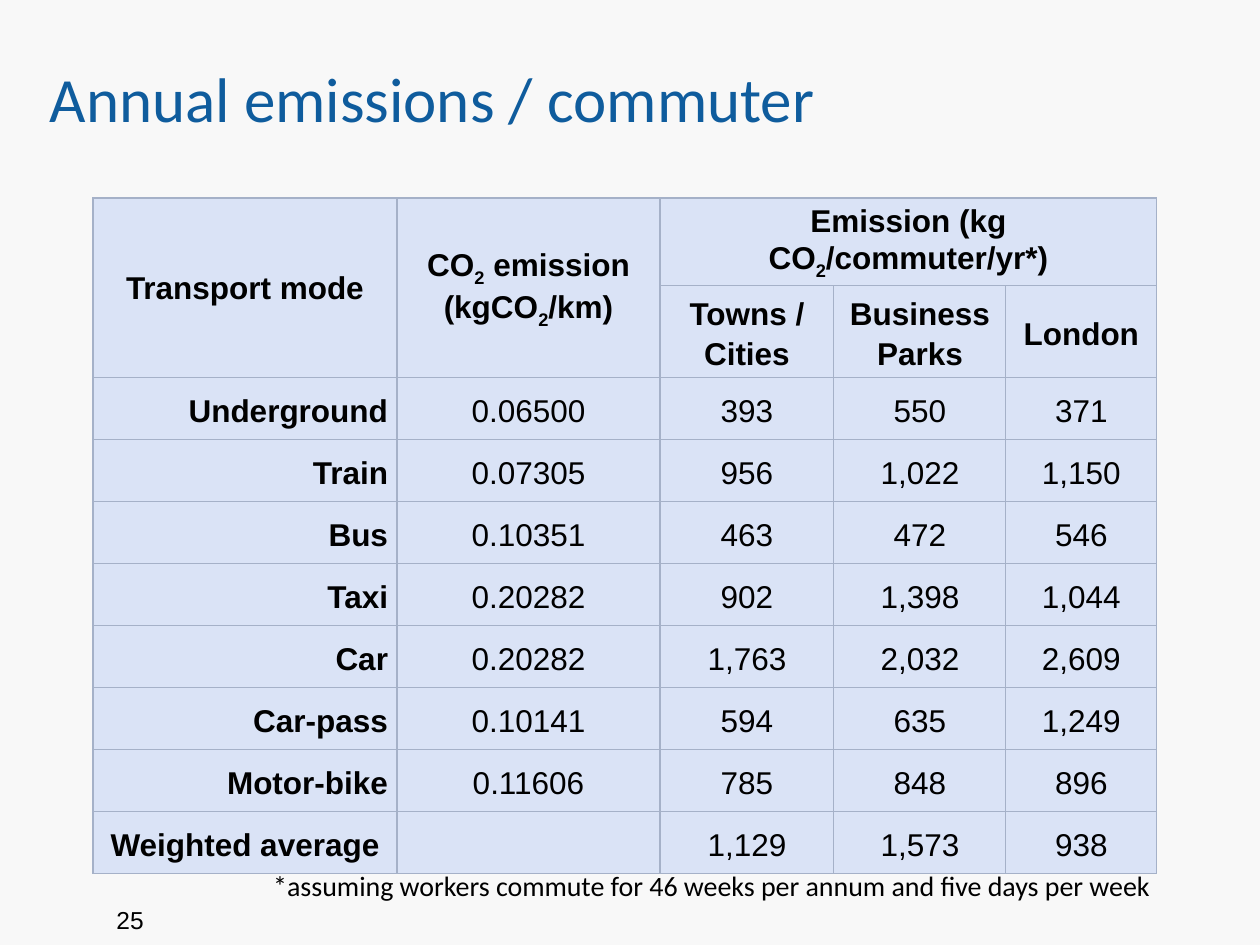
from lxml import etree
from pptx import Presentation
from pptx.dml.color import RGBColor
from pptx.enum import text
from pptx.oxml.ns import qn
from pptx.util import Pt

SCALE = 914400 / 126
COLORS = {"background": "F8F8F8", "title": "0F5C9D", "text": "000000",
          "cell": "DAE3F6", "border": "A5B1C8"}
CENTER, RIGHT = text.PP_ALIGN.CENTER, text.PP_ALIGN.RIGHT


def px(*lengths):
    return [round(length * SCALE) for length in lengths]


def write(para, words, name, size, color="text", bold=False, align=None):
    """Fill a paragraph; parts between underscores become subscripts."""
    para.alignment = align
    for index, part in enumerate(words.split("_")):
        span = para.add_run()
        span.text = part
        span.font.name, span.font.size, span.font.bold = name, Pt(size), bold
        span.font.color.rgb = RGBColor.from_string(COLORS[color])
        if index % 2:
            span._r.get_or_add_rPr().set("baseline", "-25000")


deck = Presentation()
deck.slide_width, deck.slide_height = px(1260, 945)
page = deck.slides.add_slide(deck.slide_layouts[5])
page.background.fill.solid()
page.background.fill.fore_color.rgb = RGBColor.from_string(COLORS["background"])

# Page number
number = page.shapes.add_textbox(*px(104, 899, 873, 66))
number.text_frame.word_wrap = True
write(number.text_frame.paragraphs[0], "25", "Arial", 14)

# Emissions table: two header rows, then one row per transport mode
rows = [
    ["Transport mode", "CO_2_ emission (kgCO_2_/km)",
     "Emission (kg CO_2_/commuter/yr*)", "", ""],
    ["", "", "Towns / Cities", "Business\nParks", "London"],
    ["Underground", "0.06500", "393", "550", "371"],
    ["Train", "0.07305", "956", "1,022", "1,150"],
    ["Bus", "0.10351", "463", "472", "546"],
    ["Taxi", "0.20282", "902", "1,398", "1,044"],
    ["Car", "0.20282", "1,763", "2,032", "2,609"],
    ["Car-pass", "0.10141", "594", "635", "1,249"],
    ["Motor-bike", "0.11606", "785", "848", "896"],
    ["Weighted average", "", "1,129", "1,573", "938"],
]
widths = px(304, 263, 174, 172, 151)
heights = px(88, 92, *[62] * 8)
left, top = px(93, 198)
table = page.shapes.add_table(len(rows), len(widths), left, top,
                              sum(widths), sum(heights)).table
table.first_row = table.horz_banding = False
for column, width in zip(table.columns, widths):
    column.width = width
for row, height in zip(table.rows, heights):
    row.height = height
for start, end in [((0, 0), (1, 0)), ((0, 1), (1, 1)), ((0, 2), (0, 4))]:
    table.cell(*start).merge(table.cell(*end))

last = len(rows) - 1
for r, values in enumerate(rows):
    for c, value in enumerate(values):
        cell = table.cell(r, c)
        cell.margin_left, cell.margin_right = px(9, 9)
        cell.margin_top = cell.margin_bottom = 0
        cell.vertical_anchor = text.MSO_ANCHOR.MIDDLE

        # Borders come before the fill in the cell properties
        for side in ("lnL", "lnR", "lnT", "lnB"):
            line = etree.SubElement(cell._tc.get_or_add_tcPr(), qn(f"a:{side}"),
                                    w=str(Pt(0.75)))
            paint = etree.SubElement(line, qn("a:solidFill"))
            etree.SubElement(paint, qn("a:srgbClr"), val=COLORS["border"])
        cell.fill.solid()
        cell.fill.fore_color.rgb = RGBColor.from_string(COLORS["cell"])

        if not value:
            continue
        align = RIGHT if c == 0 and 2 <= r < last else CENTER
        for index, words in enumerate(value.split("\n")):
            frame = cell.text_frame
            para = frame.add_paragraph() if index else frame.paragraphs[0]
            # Subscripts deepen a line, so the top row is set tighter
            para.line_spacing = 1.15 if r else 1.05
            write(para, words, "Arial", 18, bold=r < 2 or c == 0, align=align)

# Footnote
note = page.shapes.add_textbox(*px(249, 862, 914, 47))
note.text_frame.word_wrap = True
note.text_frame.vertical_anchor = text.MSO_ANCHOR.MIDDLE
write(note.text_frame.paragraphs[0],
      "*assuming workers commute for 46 weeks per annum and five days per week",
      "Calibri", 16, align=RIGHT)

# Title
title = page.shapes.title
title.left, title.top, title.width, title.height = px(37, 52, 974, 91)
title.text_frame.vertical_anchor = text.MSO_ANCHOR.MIDDLE
write(title.text_frame.paragraphs[0], "Annual emissions / commuter",
      "Calibri", 36, "title", align=text.PP_ALIGN.LEFT)

deck.save("out.pptx")
